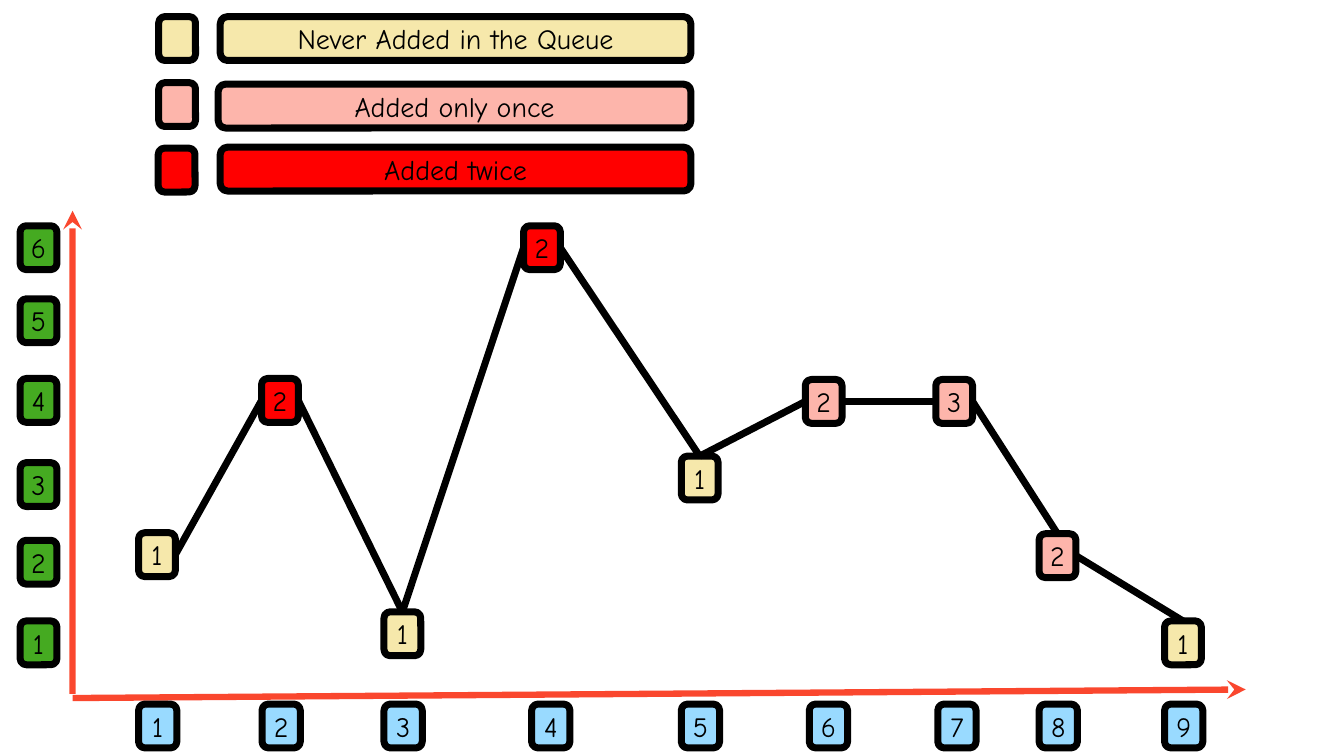
import pptx
import pptx.util
import pptx.dml.color
import pptx.enum.shapes
import pptx.enum.text
import pptx.oxml
import pptx.oxml.ns
import lxml.etree

Inches = pptx.util.Inches
TILE_WIDTH, TILE_HEIGHT = 0.73, 0.87
BLACK, AXIS_RED = "000000", "FA1F00"
NEVER = ("E5BA00", 33)
ONCE = ("FA1F00", 33)
TWICE = ("FF0000", 100)
LEVEL = ("45AA21", 100)
POSITION = ("99DAFF", 100)
TOP, LEFT, RIGHT = 0, 1, 3

FRAME_FORMAT = {
    "margin_left": Inches(0.06),
    "margin_right": Inches(0.06),
    "margin_top": Inches(0.06),
    "margin_bottom": Inches(0.06),
    "word_wrap": True,
    "auto_size": pptx.enum.text.MSO_AUTO_SIZE.SHAPE_TO_FIT_TEXT,
    "vertical_anchor": pptx.enum.text.MSO_ANCHOR.MIDDLE,
}
FONT_FORMAT = {"name": "Comic Neue", "size": pptx.util.Pt(40)}


def apply_format(target, values):
    for name, value in values.items():
        setattr(target, name, value)


def set_color(color_format, color, opacity=100):
    color_format.rgb = pptx.dml.color.RGBColor.from_string(color)
    if opacity < 100:
        for element in color_format._xFill.iter(pptx.oxml.ns.qn("a:srgbClr")):
            alpha = lxml.etree.SubElement(element, pptx.oxml.ns.qn("a:alpha"))
            alpha.set("val", str(opacity * 1000))


def set_line(line, color, width, opacity=100):
    line.fill.solid()
    line.width = pptx.util.Pt(width)
    line.color.rgb = pptx.dml.color.RGBColor.from_string(color)
    if opacity < 100:
        for element in line._ln.iter(pptx.oxml.ns.qn("a:srgbClr")):
            alpha = lxml.etree.SubElement(element, pptx.oxml.ns.qn("a:alpha"))
            alpha.set("val", str(opacity * 1000))


def set_fill(fill, color, opacity):
    fill.solid()
    set_color_target = fill.fore_color
    set_color(set_color_target, color, opacity)


def add_tile(slide, left, top, fill, text="", width=TILE_WIDTH):
    shape = slide.shapes.add_shape(
        pptx.enum.shapes.MSO_SHAPE.ROUNDED_RECTANGLE,
        Inches(left), Inches(top), Inches(width), Inches(TILE_HEIGHT))
    shape.shadow.inherit = False
    set_fill(shape.fill, *fill)
    set_line(shape.line, BLACK, 10)
    if text:
        apply_format(shape.text_frame, FRAME_FORMAT)
        paragraph = shape.text_frame.paragraphs[0]
        paragraph.alignment = pptx.enum.text.PP_ALIGN.CENTER
        run = paragraph.add_run()
        run.text = text
        apply_format(run.font, FONT_FORMAT)
        set_color(run.font.color, BLACK)
    return shape


def add_line(slide, start, end, color, width, opacity=100):
    connector = slide.shapes.add_connector(
        pptx.enum.shapes.MSO_CONNECTOR.STRAIGHT,
        *(Inches(length) for length in (*start, *end)))
    set_line(connector.line, color, width, opacity)
    lxml.etree.SubElement(connector._element.spPr, pptx.oxml.ns.qn("a:effectLst"))
    return connector


def add_axes(slide, left, top):
    ends = [((0, 9.59), (0, 0)), ((0, 9.67), (23.28, 9.5))]
    for start, end in ends:
        axis = add_line(slide, (left + start[0], top + start[1]),
                        (left + end[0], top + end[1]), AXIS_RED, 9, 82)
        tail = lxml.etree.SubElement(axis.line._ln, pptx.oxml.ns.qn("a:tailEnd"))
        tail.set("type", "stealth")


def add_level_labels(slide, left, top):
    offsets = [7.84, 6.24, 4.7, 3.03, 1.45, 0]
    for number, offset in enumerate(offsets, 1):
        add_tile(slide, left, top + offset, LEVEL, str(number))


def add_position_labels(slide, left, top):
    offsets = [0, 2.45, 4.87, 7.8, 10.77, 13.31, 15.86, 17.87, 20.36]
    for number, offset in enumerate(offsets, 1):
        add_tile(slide, left + offset, top, POSITION, str(number), 0.76)


def add_nodes(slide, left, top):
    nodes = [
        (0, 6.09, NEVER, "1"),
        (2.44, 3.03, TWICE, "2"),
        (4.87, 7.66, NEVER, "1"),
        (7.64, 0, TWICE, "2"),
        (10.77, 4.57, NEVER, "1"),
        (13.23, 3.05, ONCE, "2"),
        (15.82, 3.05, ONCE, "3"),
        (17.87, 6.11, ONCE, "2"),
        (20.36, 7.84, NEVER, "1"),
    ]
    return [add_tile(slide, left + x, top + y, fill, text)
            for x, y, fill, text in nodes]


def add_links(slide, nodes):
    sides = [(RIGHT, LEFT), (RIGHT, TOP), (TOP, LEFT), (RIGHT, TOP),
             (TOP, LEFT), (RIGHT, LEFT), (RIGHT, TOP), (RIGHT, TOP)]
    for first, second, (begin_side, end_side) in zip(nodes, nodes[1:], sides):
        connector = add_line(slide, (0, 0), (0, 0), BLACK, 10)
        connector.begin_connect(first, begin_side)
        connector.end_connect(second, end_side)


def add_legend(slide, left, top):
    entries = [
        (0, 0, 1.22, 0, 9.34, NEVER, "Never Added in the Queue"),
        (0, 1.31, 1.18, 1.34, 9.38, ONCE, "Added only once"),
        (-0.01, 2.61, 1.22, 2.59, 9.34, TWICE, "Added twice"),
    ]
    for key_x, key_y, label_x, label_y, width, fill, text in entries:
        add_tile(slide, left + key_x, top + key_y, fill)
        add_tile(slide, left + label_x, top + label_y, fill, text, width)


def main():
    presentation = pptx.Presentation()
    presentation.slide_width = Inches(26.67)
    presentation.slide_height = Inches(15)
    slide = presentation.slides.add_slide(presentation.slide_layouts[6])
    nodes = add_nodes(slide, 2.75, 4.48)
    add_axes(slide, 1.44, 4.18)
    add_level_labels(slide, 0.4, 4.48)
    add_links(slide, nodes)
    add_position_labels(slide, 2.75, 13.97)
    add_legend(slide, 3.15, 0.33)
    presentation.save("out.pptx")


if __name__ == "__main__":
    main()
